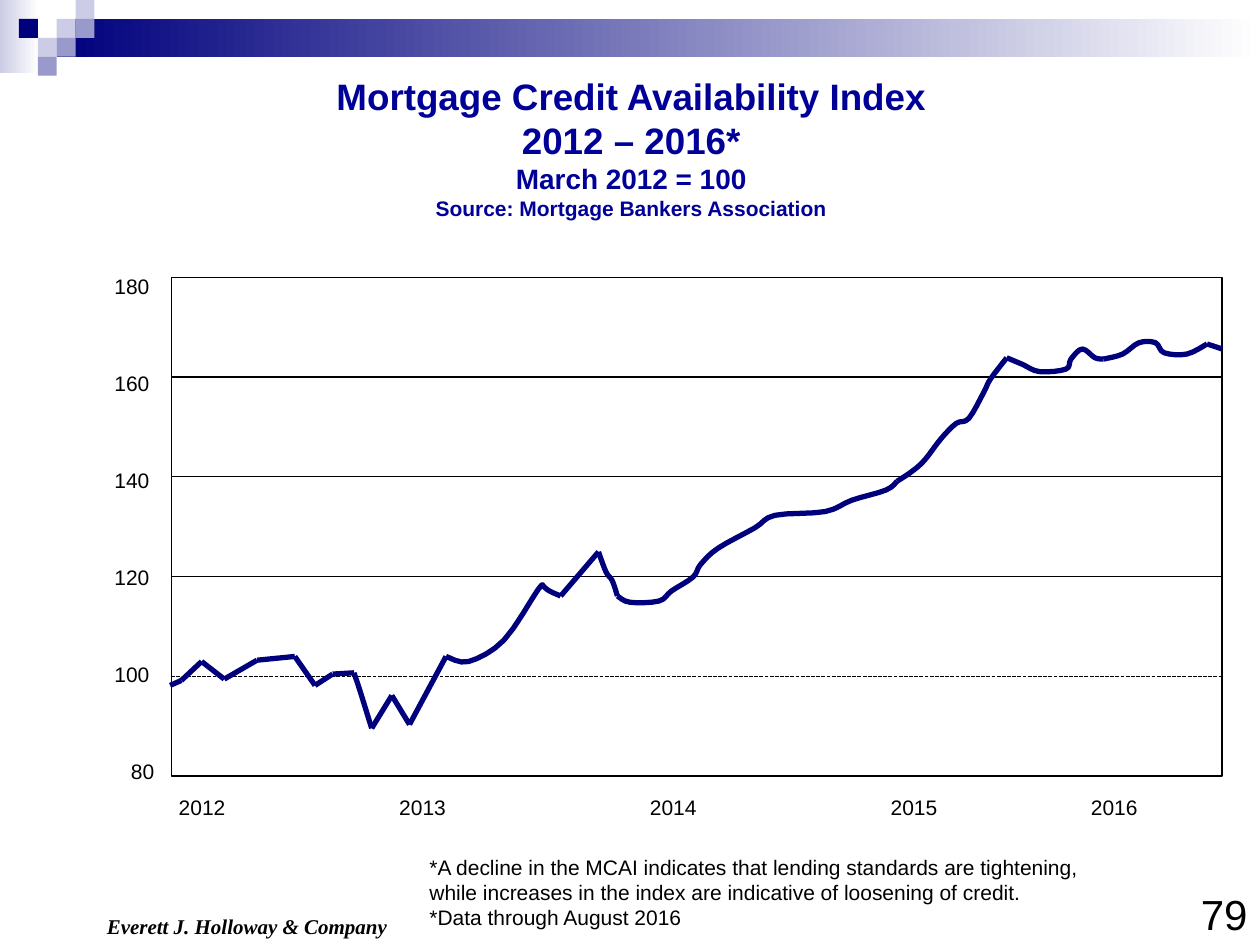
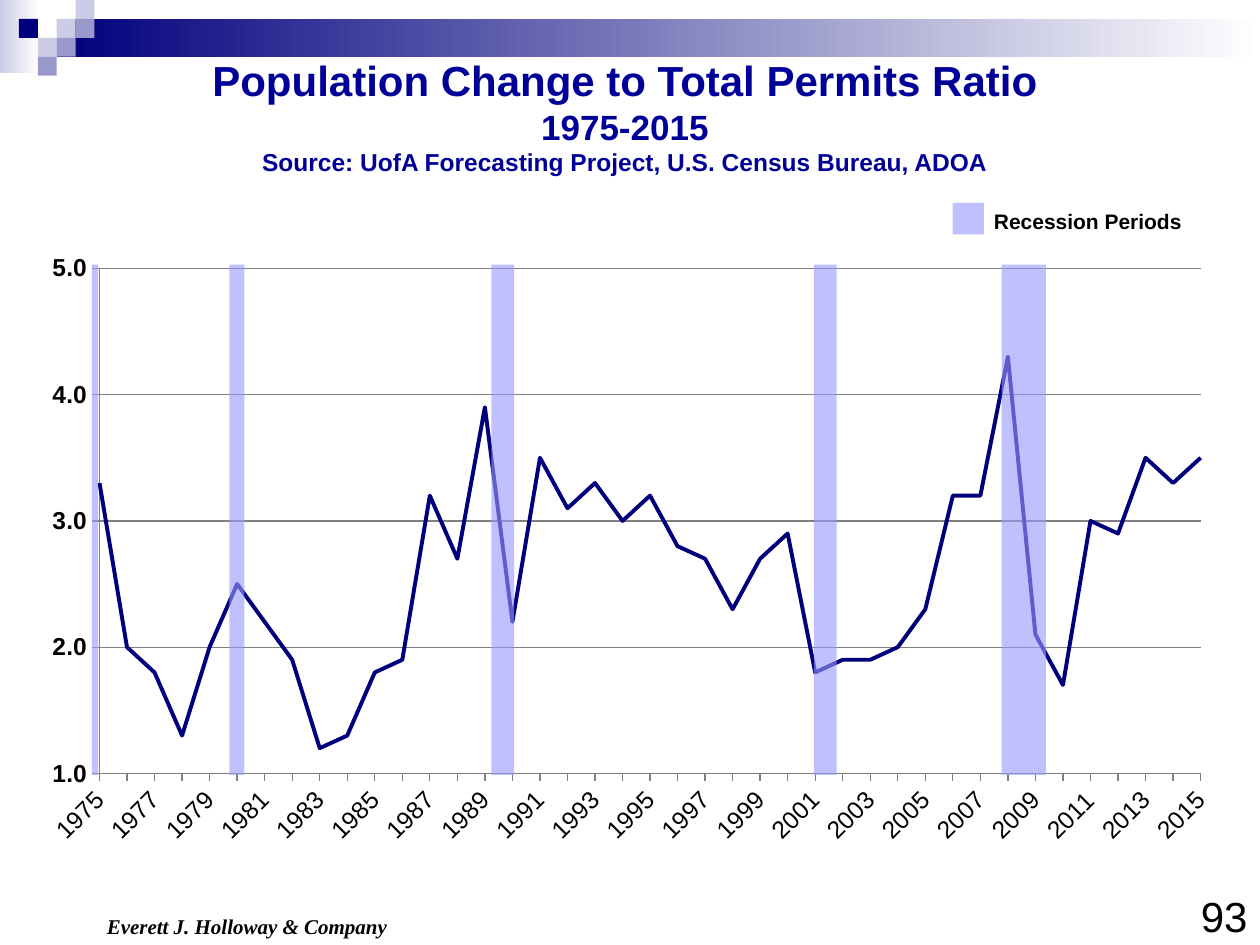
from lxml.etree import SubElement
from pptx import Presentation
from pptx.chart.data import CategoryChartData
from pptx.dml.color import RGBColor
from pptx.enum.chart import XL_CHART_TYPE, XL_TICK_MARK
from pptx.enum.dml import MSO_LINE
from pptx.enum.shapes import MSO_CONNECTOR, MSO_SHAPE
from pptx.enum.text import MSO_ANCHOR, PP_ALIGN
from pptx.oxml import parse_xml
from pptx.oxml.ns import nsdecls, qn
from pptx.util import Cm, Pt

COLORS = {
    "navy": "00007D", "title": "000099", "violet": "9999CC", "mist": "CCCCE6",
    "recession": "9999FF", "black": "000000", "white": "FFFFFF", "grid": "808080",
}
COMPANY = "Everett J. Holloway & Company"

GRADIENT_BANDS = [((0, 0, 0.31, 0.58), "mist"), ((0.45, 0.15, 9.55, 0.3), "navy")]
MOSAIC_SIDE = 0.15
MOSAIC_ROWS = ["....m", ".n.mv", "..mv", "..v"]
MOSAIC_COLORS = {"m": "mist", "n": "navy", "v": "violet"}

CREDIT_TITLE = [
    ("Mortgage Credit Availability Index", 21), ("2012 – 2016*", 21),
    ("March 2012 = 100", 16), ("Source: Mortgage Bankers Association", 12),
]
CREDIT_NOTES = [
    "*A decline in the MCAI indicates that lending standards are tightening,",
    "while increases in the index are indicative of loosening of credit.",
    "*Data through August 2016",
]
INDEX_FRAME = (1.36, 2.2, 8.34, 3.96)
INDEX_VALUES = range(180, 79, -20)
BASE_INDEX = 100
YEAR_LEFTS = {"2012": 1.32, "2013": 3.07, "2014": 5.06, "2015": 6.97, "2016": 8.56}
TRACE_START = (1.35, 5.44)
TRACE = [
    [(1.44, 5.4)], [(1.6, 5.25)], [(1.78, 5.39)], [(2.04, 5.24)], [(2.34, 5.21)],
    [(2.5, 5.44)], [(2.64, 5.35)], [(2.81, 5.34)],
    [(2.86, 5.49), (2.95, 5.78)],
    [(3.11, 5.52)], [(3.25, 5.75)], [(3.54, 5.21)],
    [(3.72, 5.25), (4, 5.08), (4.27, 4.68), (4.31, 4.65)],
    [(4.36, 4.69), (4.45, 4.73)],
    [(4.75, 4.38)],
    [(4.81, 4.54), (4.86, 4.61), (4.9, 4.73)],
    [(5, 4.78), (5.23, 4.77), (5.33, 4.69), (5.5, 4.58), (5.56, 4.48),
     (5.7, 4.35), (5.99, 4.19), (6.15, 4.09), (6.55, 4.06), (6.76, 3.97),
     (7.03, 3.89), (7.12, 3.82)],
    [(7.24, 3.74), (7.34, 3.65), (7.47, 3.48), (7.59, 3.36), (7.69, 3.32),
     (7.81, 3.11), (7.86, 3.01), (7.99, 2.84)],
    [(8.11, 2.89), (8.25, 2.95), (8.46, 2.93), (8.5, 2.85), (8.59, 2.77),
     (8.69, 2.84), (8.76, 2.85)],
    [(8.91, 2.81), (9.04, 2.72), (9.17, 2.72), (9.24, 2.8), (9.42, 2.81),
     (9.58, 2.73)],
    [(9.7, 2.77)],
]
CURVE_STEPS = 4

PERMITS_TITLE = [
    ("Population Change to Total Permits Ratio", 24), ("1975-2015", 20),
    ("Source: UofA Forecasting Project, U.S. Census Bureau, ADOA", 14),
]
FIRST_YEAR = 1975
PERMITS_RATIO = [
    3.3, 2, 1.8, 1.3, 2, 2.5, 2.2, 1.9, 1.2, 1.3, 1.8, 1.9, 3.2, 2.7, 3.9, 2.2, 3.5,
    3.1, 3.3, 3, 3.2, 2.8, 2.7, 2.3, 2.7, 2.9, 1.8, 1.9, 1.9, 2, 2.3, 3.2, 3.2, 4.3,
    2.1, 1.7, 3, 2.9, 3.5, 3.3, 3.5,
]
RATIO_AREA = (0.21, 1.93, 9.6, 4.88)
RATIO_PLOT = (0.79, 2.13, 8.74, 4.01)
RECESSIONS = [(0.73, 0.05), (1.82, 0.12), (3.9, 0.18), (6.46, 0.18), (7.95, 0.35)]
RECESSION_TOP, RECESSION_HEIGHT = 2.1, 4.05
RECESSION_KEY = (7.56, 1.61, 0.25, 0.25)


def cm(inches):
    return Cm(inches * 2.54)


def rgb(name):
    return RGBColor.from_string(COLORS[name])


def add_rect(slide, box, fill=None, alpha=None, line=None):
    rect = slide.shapes.add_shape(MSO_SHAPE.RECTANGLE, *map(cm, box))
    rect.shadow.inherit = False
    if fill:
        rect.fill.solid()
        rect.fill.fore_color.rgb = rgb(fill)
    else:
        rect.fill.background()
    if alpha:
        color = rect.fill._xPr.find(qn("a:solidFill"))[0]
        SubElement(color, qn("a:alpha"), val=str(alpha * 1000))
    if line:
        rect.line.color.rgb = rgb(line)
        rect.line.width = Pt(0.75)
    else:
        rect.line.fill.background()
    return rect


def add_line(slide, start, end, color, width):
    line = slide.shapes.add_connector(MSO_CONNECTOR.STRAIGHT, *map(cm, start + end))
    line.line.color.rgb = rgb(color)
    line.line.width = Pt(width)
    SubElement(line._element.spPr, qn("a:effectLst"))
    return line


def smooth(points):
    padded = [points[0], *points, points[-1]]
    dense = [points[0]]
    for a, b, c, d in zip(padded, padded[1:], padded[2:], padded[3:]):
        for step in range(1, CURVE_STEPS + 1):
            t = step / CURVE_STEPS
            dense.append(tuple(
                q + t / 2 * (r - p + t * (2 * p - 5 * q + 4 * r - s
                                          + t * (3 * (q - r) + s - p)))
                for p, q, r, s in zip(a, b, c, d)))
    return dense


def add_curve(slide, points, color, width):
    corners = [(cm(x), cm(y)) for x, y in smooth(points)]
    builder = slide.shapes.build_freeform(*corners[0])
    builder.add_line_segments(corners[1:], close=False)
    curve = builder.convert_to_shape()
    curve.shadow.inherit = False
    curve.fill.background()
    curve.line.color.rgb = rgb(color)
    curve.line.width = Pt(width)


def style(run, size, color="black", font="Arial", bold=False, italic=False):
    run.font.size = Pt(size)
    run.font.name = font
    run.font.bold = bold
    run.font.italic = italic
    run.font.color.rgb = rgb(color)


def add_text(slide, box, lines, size=12, align=PP_ALIGN.LEFT, **look):
    frame = slide.shapes.add_textbox(*map(cm, box)).text_frame
    frame.word_wrap = True
    for i, words in enumerate(lines):
        paragraph = frame.add_paragraph() if i else frame.paragraphs[0]
        paragraph.alignment = align
        run = paragraph.add_run()
        run.text = words
        style(run, size, **look)


def add_title(slide, box, lines, anchor):
    frame = slide.shapes.add_textbox(*map(cm, box)).text_frame
    frame.word_wrap = True
    frame.vertical_anchor = anchor
    paragraph = frame.paragraphs[0]
    paragraph.alignment = PP_ALIGN.CENTER
    for i, (words, size) in enumerate(lines):
        if i:
            paragraph.add_line_break()
        run = paragraph.add_run()
        run.text = words
        style(run, size, "title", bold=True)


def start_slide(deck, number, number_box):
    slide = deck.slides.add_slide(deck.slide_layouts[6])
    for box, color in GRADIENT_BANDS:
        fill = add_rect(slide, box).fill
        fill.gradient()
        fill.gradient_angle = 0
        for stop, name in zip(fill.gradient_stops, (color, "white")):
            stop.color.rgb = rgb(name)
    for row, tiles in enumerate(MOSAIC_ROWS):
        for column, tile in enumerate(tiles):
            if tile in MOSAIC_COLORS:
                corner = (column * MOSAIC_SIDE, row * MOSAIC_SIDE)
                add_rect(slide, corner + (MOSAIC_SIDE, MOSAIC_SIDE), MOSAIC_COLORS[tile])
    add_text(slide, (0.75, 7.2, 2.5, 0.3), [COMPANY],
             font="Times New Roman", bold=True, italic=True)
    add_text(slide, number_box, [number], 24, PP_ALIGN.RIGHT)
    return slide


def add_index_scale(slide):
    left, top, width, height = INDEX_FRAME
    add_rect(slide, INDEX_FRAME, line="black")
    last = len(INDEX_VALUES) - 1
    for i, value in enumerate(INDEX_VALUES):
        indent = 0.94 if value < BASE_INDEX else 0.81
        add_text(slide, (indent, 2.12 + 0.77 * i, 0.81, 0.3), [str(value)])
        if 0 < i < last:
            y = top + height * i / last
            grid = add_line(slide, (left, y), (left + width, y), "black", 0.75)
            if value == BASE_INDEX:
                grid.line.dash_style = MSO_LINE.SQUARE_DOT
    for year, year_left in YEAR_LEFTS.items():
        add_text(slide, (year_left, 6.26, 0.81, 0.3), [year])


def build_credit_slide(deck):
    slide = start_slide(deck, "79", (9.22, 7, 0.78, 0.5))
    add_title(slide, (0.51, 0.54, 9, 1.25), CREDIT_TITLE, MSO_ANCHOR.MIDDLE)
    add_index_scale(slide)
    add_text(slide, (3.31, 6.73, 5.43, 0.91), CREDIT_NOTES)
    start = TRACE_START
    for stroke in TRACE:
        if len(stroke) == 1:
            add_line(slide, start, stroke[0], "navy", 3)
        else:
            add_curve(slide, [start, *stroke], "navy", 3)
        start = stroke[-1]


def place_plot(chart):
    left, top, width, height = RATIO_AREA
    x, y, w, h = RATIO_PLOT
    shares = {"x": (x - left) / width, "y": (y - top) / height,
              "w": w / width, "h": h / height}
    modes = "".join(f'<c:{side}Mode val="edge"/>' for side in "xy")
    sizes = "".join(f'<c:{key} val="{share:.4f}"/>' for key, share in shares.items())
    area = chart._chartSpace.chart.plotArea
    for old in area.findall(qn("c:layout")):
        area.remove(old)
    area.insert(0, parse_xml(
        f'<c:layout {nsdecls("c")}><c:manualLayout><c:layoutTarget val="inner"/>'
        f"{modes}{sizes}</c:manualLayout></c:layout>"))


def add_ratio_chart(slide):
    data = CategoryChartData(number_format="0.0")
    data.categories = [str(FIRST_YEAR + i) for i in range(len(PERMITS_RATIO))]
    data.add_series("Series 1", PERMITS_RATIO)
    chart = slide.shapes.add_chart(XL_CHART_TYPE.LINE, *map(cm, RATIO_AREA), data).chart
    chart.has_legend = False
    chart.has_title = False
    chart.font.name = "Arial"
    chart.font.size = Pt(18)
    chart.font.color.rgb = rgb("black")
    chart.plots[0].vary_by_categories = False
    ratio = chart.plots[0].series[0]
    ratio.smooth = False
    ratio.format.line.color.rgb = rgb("navy")
    ratio.format.line.width = Pt(2.25)

    years, values = chart.category_axis, chart.value_axis
    for axis in (years, values):
        axis.major_tick_mark = XL_TICK_MARK.OUTSIDE
        axis.minor_tick_mark = XL_TICK_MARK.NONE
        axis.tick_labels.font.size = Pt(14)
        axis.tick_labels.font.bold = axis is values
        axis.format.line.color.rgb = rgb("grid")
    values.tick_labels.number_format = "#,##0.0"
    values.tick_labels.number_format_is_linked = False
    values.minimum_scale, values.maximum_scale, values.major_unit = 1, 5, 1
    values.has_major_gridlines = True
    values.major_gridlines.format.line.color.rgb = rgb("grid")

    years._element.find(qn("c:txPr")).find(qn("a:bodyPr")).set("rot", "-2700000")
    no_multi = years._element.find(qn("c:noMultiLvlLbl"))
    for tag, step in (("tickLblSkip", 2), ("tickMarkSkip", 1)):
        no_multi.addprevious(parse_xml(f'<c:{tag} {nsdecls("c")} val="{step}"/>'))
    between = values._element.find(qn("c:crossBetween"))
    if between is None:
        between = parse_xml(f'<c:crossBetween {nsdecls("c")} val="midCat"/>')
        values._element.find(qn("c:majorUnit")).addprevious(between)
    between.set("val", "midCat")
    place_plot(chart)


def build_permits_slide(deck):
    slide = start_slide(deck, "93", (9.1, 7.02, 0.9, 0.5))
    add_title(slide, (0, 0.2, 9.92, 1.25), PERMITS_TITLE, MSO_ANCHOR.BOTTOM)
    add_ratio_chart(slide)
    add_rect(slide, RECESSION_KEY, "recession", 61)
    add_text(slide, (7.79, 1.61, 1.8, 0.3), ["Recession Periods"], bold=True)
    for left, width in RECESSIONS:
        add_rect(slide, (left, RECESSION_TOP, width, RECESSION_HEIGHT), "recession", 61)


def main():
    deck = Presentation()
    deck.slide_width, deck.slide_height = Cm(25.4), Cm(19.05)
    build_credit_slide(deck)
    build_permits_slide(deck)
    deck.save("out.pptx")


if __name__ == "__main__":
    main()
